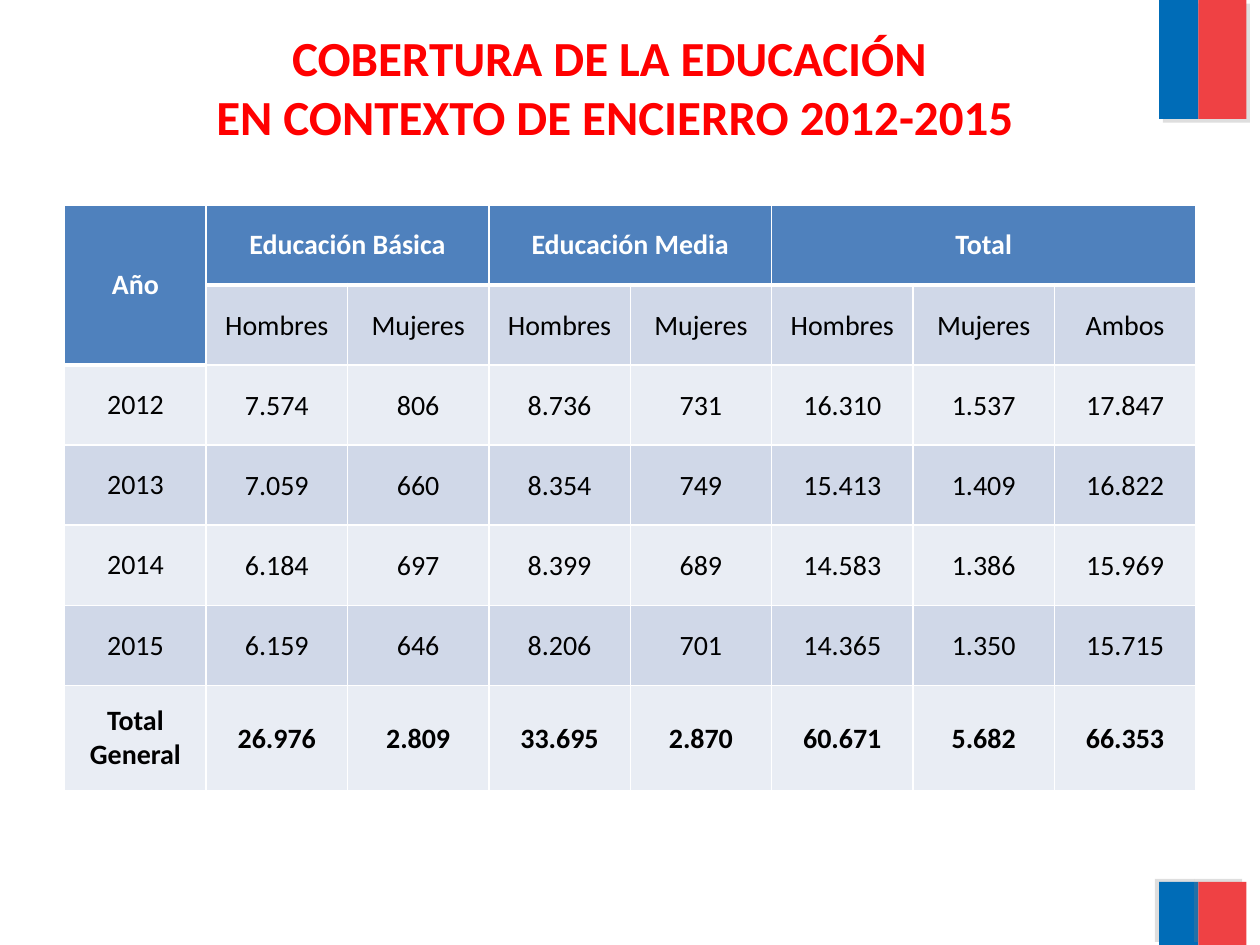
from lxml.etree import SubElement
from pptx import Presentation
from pptx.dml.color import RGBColor
from pptx.enum.shapes import MSO_SHAPE as Shape
from pptx.enum.text import MSO_ANCHOR as Anchor, MSO_AUTO_SIZE as AutoSize, PP_ALIGN as Align
from pptx.oxml import parse_xml
from pptx.oxml.ns import nsdecls, qn
from pptx.util import Pt

FLAG_BLUE = RGBColor(0x00, 0x6C, 0xB7)
FLAG_RED = RGBColor(0xEF, 0x41, 0x44)
TITLE_RED = RGBColor(0xFF, 0x00, 0x00)
HEADER_BLUE = RGBColor(0x4F, 0x81, 0xBD)
BAND_DARK = RGBColor(0xD0, 0xD8, 0xE8)
BAND_LIGHT = RGBColor(0xE9, 0xED, 0xF4)
WHITE = RGBColor(0xFF, 0xFF, 0xFF)
BLACK = RGBColor(0x00, 0x00, 0x00)


def add_run(paragraph, text, size, color, bold):
    run = paragraph.add_run()
    run.text = text
    run.font.name = "Calibri"
    run.font.size = Pt(size)
    run.font.color.rgb = color
    run.font.bold = bold


def set_borders(cell, bottom_width):
    properties = cell._tc.get_or_add_tcPr()
    for position, side in enumerate("LRTB"):
        width = bottom_width if side == "B" else 1
        properties.insert(position, parse_xml(
            f'<a:ln{side} {nsdecls("a")} w="{Pt(width)}"><a:solidFill>'
            f'<a:srgbClr val="{WHITE}"/></a:solidFill></a:ln{side}>'))


deck = Presentation()
deck.slide_width, deck.slide_height = Pt(720), Pt(540)
slide = deck.slides.add_slide(deck.slide_layouts[5])

# Flag bands in the right corners: top, height, shadow direction in degrees
for top, height, direction in ((0, 68, 45), (504, 36, 215)):
    for left, width, color in ((662.4, 22.4, FLAG_BLUE), (684.8, 27.4, FLAG_RED)):
        band = slide.shapes.add_shape(Shape.RECTANGLE, Pt(left), Pt(top), Pt(width), Pt(height))
        band.fill.solid()
        band.fill.fore_color.rgb = color
        band.line.fill.background()
        band.shadow.inherit = False
        effects = band._element.spPr.find(qn("a:effectLst"))
        shadow = SubElement(effects, qn("a:outerShdw"), dist=str(Pt(3)),
                            dir=str(direction * 60000), algn="ctr", rotWithShape="0")
        shadow_color = SubElement(shadow, qn("a:srgbClr"), val="808080")
        SubElement(shadow_color, qn("a:alpha"), val="25000")

# Title
title = slide.shapes.title
title.left, title.top, title.width, title.height = Pt(76.3), Pt(15.1), Pt(550), Pt(68.4)
title_frame = title.text_frame
title_frame.word_wrap = True
title_frame.auto_size = AutoSize.NONE
title_frame.vertical_anchor = Anchor.MIDDLE
heading = title_frame.paragraphs[0]
heading.alignment = Align.CENTER
add_run(heading, "COBERTURA DE LA EDUCACIÓN ", 28, TITLE_RED, True)
heading.add_line_break()
add_run(heading, "EN CONTEXTO DE ENCIERRO 2012-2015", 28, TITLE_RED, True)

# Coverage table
coverage = (
    ("Año", "Educación Básica", "", "Educación Media", "", "Total", "", ""),
    ("", "Hombres", "Mujeres", "Hombres", "Mujeres", "Hombres", "Mujeres", "Ambos"),
    ("2012", "7.574", "806", "8.736", "731", "16.310", "1.537", "17.847"),
    ("2013", "7.059", "660", "8.354", "749", "15.413", "1.409", "16.822"),
    ("2014", "6.184", "697", "8.399", "689", "14.583", "1.386", "15.969"),
    ("2015", "6.159", "646", "8.206", "701", "14.365", "1.350", "15.715"),
    ("Total General", "26.976", "2.809", "33.695", "2.870", "60.671", "5.682", "66.353"),
)
last_row = len(coverage) - 1
table = slide.shapes.add_table(len(coverage), len(coverage[0]),
                               Pt(37), Pt(117), Pt(646.4), Pt(334.8)).table
for column in table.columns:
    column.width = Pt(80.8)
for row in table.rows:
    row.height = Pt(45.8)
table.rows[last_row].height = Pt(60)

# Merged headings: first row, first column, last row, last column
for top, left, bottom, right in ((0, 0, 1, 0), (0, 1, 0, 2), (0, 3, 0, 4), (0, 5, 0, 7)):
    table.cell(top, left).merge(table.cell(bottom, right))

for r, values in enumerate(coverage):
    for c, value in enumerate(values):
        cell = table.cell(r, c)
        is_header = r == 0 or (r == 1 and c == 0)
        cell.fill.solid()
        cell.fill.fore_color.rgb = HEADER_BLUE if is_header else BAND_DARK if r % 2 else BAND_LIGHT
        set_borders(cell, 3 if is_header else 1)
        cell.vertical_anchor = Anchor.MIDDLE
        if r > 0 and c > 0:
            cell.margin_left = cell.margin_top = cell.margin_right = Pt(0.7)
            cell.margin_bottom = Pt(0)
        if value:
            paragraph = cell.text_frame.paragraphs[0]
            paragraph.alignment = Align.CENTER
            add_run(paragraph, value, 16, WHITE if is_header else BLACK,
                    is_header or r == last_row)

deck.save("out.pptx")
